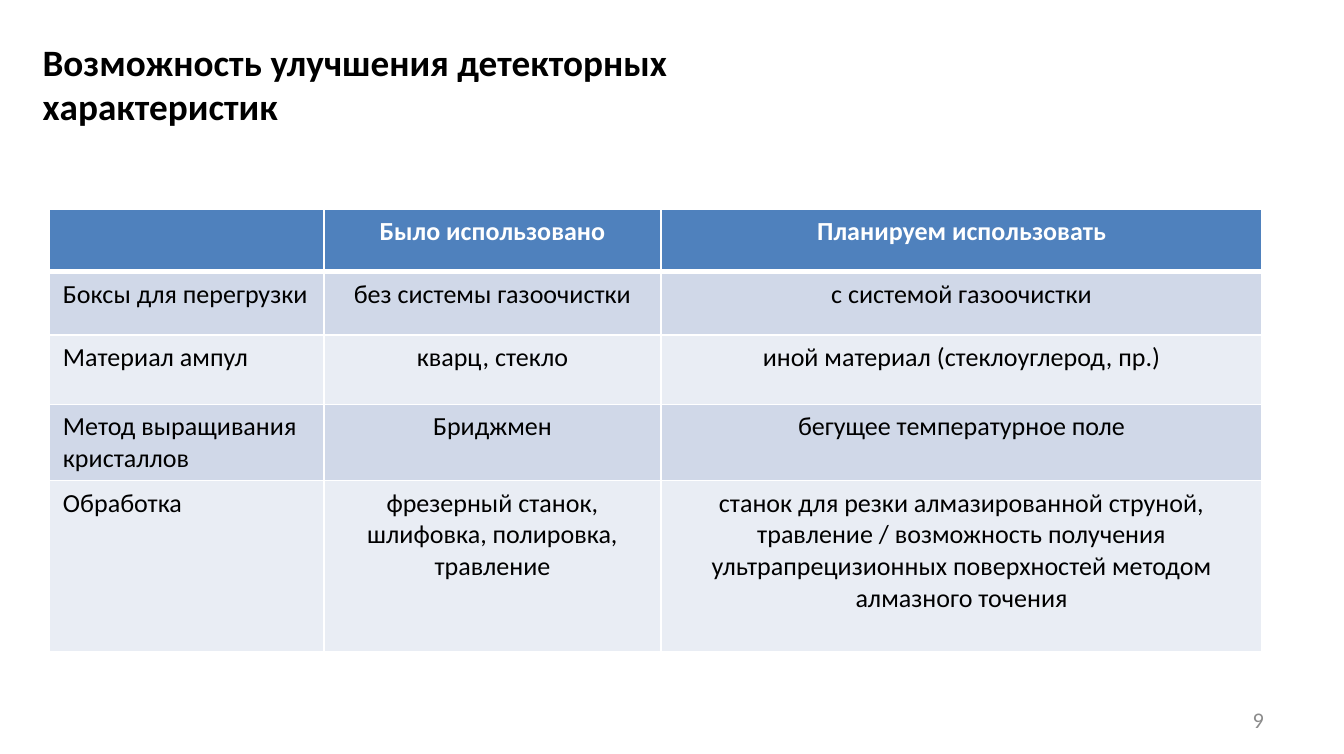
from lxml import etree
from pptx import Presentation
from pptx.dml.color import RGBColor
from pptx.enum.text import MSO_ANCHOR, PP_ALIGN
from pptx.oxml.ns import qn
from pptx.util import Inches, Pt

LEFT, CENTER, RIGHT = PP_ALIGN.LEFT, PP_ALIGN.CENTER, PP_ALIGN.RIGHT
MIDDLE = MSO_ANCHOR.MIDDLE

BLACK = RGBColor(0x00, 0x00, 0x00)
WHITE = RGBColor(0xFF, 0xFF, 0xFF)
GRAY = RGBColor(0x8C, 0x8C, 0x8C)
BLUE = RGBColor(0x4F, 0x81, 0xBD)
BAND_DARK = RGBColor(0xD0, 0xD8, 0xE8)
BAND_LIGHT = RGBColor(0xE9, 0xED, 0xF4)

FONT = "Calibri"
COLUMNS = [2.05, 2.52, 4.49]
ROW_HEIGHTS = [0.47, 0.47, 0.52, 0.57, 1.28]
ROWS = [
    ["", "Было использовано", "Планируем использовать"],
    ["Боксы для перегрузки", "без системы газоочистки", "с системой газоочистки"],
    ["Материал ампул", "кварц, стекло", "иной материал (стеклоуглерод, пр.)"],
    ["Метод выращивания кристаллов", "Бриджмен", "бегущее температурное поле"],
    ["Обработка", "фрезерный станок, шлифовка, полировка, травление",
     "станок для резки алмазированной струной, травление / возможность получения "
     "ультрапрецизионных поверхностей методом алмазного точения"],
]


def write(tf, text, size=14, color=BLACK, bold=False, align=LEFT):
    p = tf.paragraphs[0]
    p.alignment = align
    p.font.size = Pt(size)
    if text:
        r = p.add_run()
        r.text = text
        r.font.name = FONT
        r.font.size = Pt(size)
        r.font.bold = bold
        r.font.color.rgb = color


def add_text(s, box, text, **fmt):
    tf = s.shapes.add_textbox(*map(Inches, box)).text_frame
    tf.word_wrap = True
    tf.vertical_anchor = MIDDLE
    write(tf, text, **fmt)


def set_borders(cell, bottom):
    tcPr = cell._tc.get_or_add_tcPr()
    widths = {"a:lnL": 1, "a:lnR": 1, "a:lnT": 1, "a:lnB": bottom}
    for i, (tag, width) in enumerate(widths.items()):
        ln = etree.Element(qn(tag), w=str(Pt(width)))
        fill = etree.SubElement(ln, qn("a:solidFill"))
        etree.SubElement(fill, qn("a:srgbClr"), val=str(WHITE))
        tcPr.insert(i, ln)


def add_comparison_table(s, left, top):
    size = (sum(COLUMNS), sum(ROW_HEIGHTS))
    table = s.shapes.add_table(len(ROWS), len(COLUMNS),
                               *map(Inches, (left, top, *size))).table
    for column, width in zip(table.columns, COLUMNS):
        column.width = Inches(width)
    for i, (row, height) in enumerate(zip(table.rows, ROW_HEIGHTS)):
        row.height = Inches(height)
        header = i == 0
        band = BLUE if header else BAND_DARK if i % 2 else BAND_LIGHT
        for j, cell in enumerate(row.cells):
            cell.fill.solid()
            cell.fill.fore_color.rgb = band
            set_borders(cell, bottom=3 if header else 1)
            write(cell.text_frame, ROWS[i][j], bold=header,
                  color=WHITE if header else BLACK,
                  align=CENTER if j else LEFT)


def build_slide(prs):
    s = prs.slides.add_slide(prs.slide_layouts[6])
    add_text(s, (0.22, 0.09, 5.12, 1.07),
             "Возможность улучшения детекторных характеристик", size=20, bold=True)
    add_comparison_table(s, 0.37, 1.56)
    add_text(s, (7.2, 5.22, 2.34, 0.3), "9", size=12, color=GRAY, align=RIGHT)


def main():
    prs = Presentation()
    prs.slide_width = Inches(10.04)
    prs.slide_height = Inches(5.63)
    build_slide(prs)
    prs.save("out.pptx")


if __name__ == "__main__":
    main()
